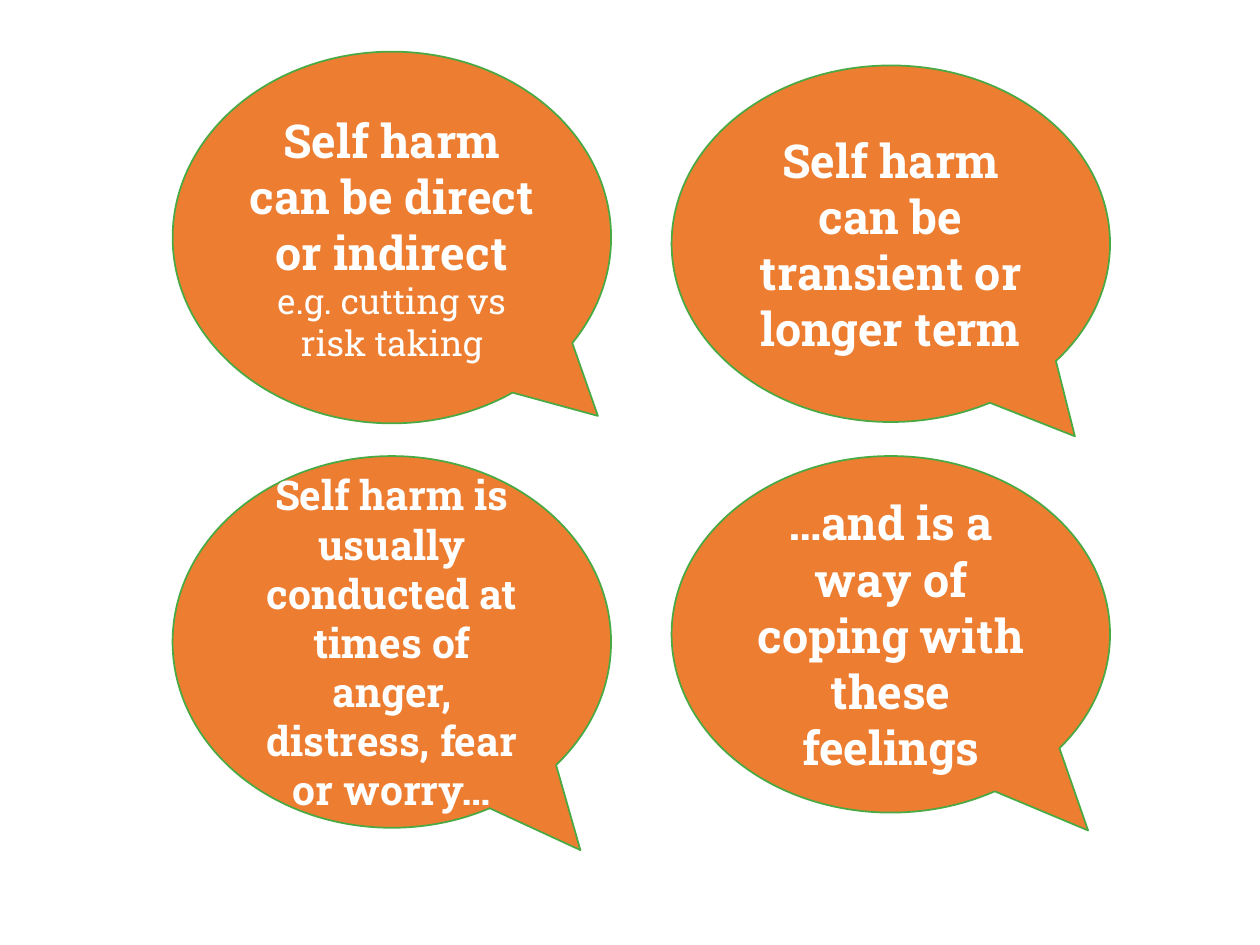
from pptx import Presentation
from pptx.dml.color import RGBColor
from pptx.enum.shapes import MSO_SHAPE
from pptx.enum.text import MSO_ANCHOR, PP_ALIGN
from pptx.util import Inches, Pt

BUBBLE = MSO_SHAPE.OVAL_CALLOUT
MIDDLE = MSO_ANCHOR.MIDDLE
CENTER = PP_ALIGN.CENTER

FONT = "Roboto Slab"
ORANGE, GREEN, WHITE = "ED7D31", "49AA43", "FFFFFF"
LEFT, RIGHT, LOWER = 1.37, 5.33, 3.62
WIDTH, TALL, SHORT = 3.48, 2.95, 2.83

# Left, top, height, tail tip, and lines of (text, size, bold)
BUBBLES = [
    (LEFT, 0.41, TALL, (0.47, 0.48),
     [("Self harm can be direct or indirect", 26.7, True),
      ("e.g. cutting vs risk taking", 20, False)]),
    (RIGHT, 0.52, SHORT, (0.42, 0.54),
     [("Self harm can be transient or longer term", 26.7, True)]),
    (LEFT, LOWER, TALL, (0.43, 0.56),
     [("Self harm is usually conducted at times of anger, "
       "distress, fear or worry…", 23.4, True)]),
    (RIGHT, LOWER, SHORT, (0.45, 0.55),
     [("…and is a way of coping with these feelings", 26.7, True)]),
]


def color(code):
    return RGBColor.from_string(code)


def add_text(frame, lines):
    frame.word_wrap = True
    frame.vertical_anchor = MIDDLE
    frame.text = "\n".join(text for text, _, _ in lines)
    for para, (_, size, bold) in zip(frame.paragraphs, lines):
        para.alignment = CENTER
        for run in para.runs:
            run.font.name = FONT
            run.font.size = Pt(size)
            run.font.bold = bold
            run.font.color.rgb = color(WHITE)


def add_bubble(slide, left, top, height, tip, lines):
    shape = slide.shapes.add_shape(
        BUBBLE, Inches(left), Inches(top), Inches(WIDTH), Inches(height))
    shape.shadow.inherit = False
    for i, value in enumerate(tip):
        shape.adjustments[i] = value
    shape.fill.solid()
    shape.fill.fore_color.rgb = color(ORANGE)
    shape.line.color.rgb = color(GREEN)
    shape.line.width = Pt(1)
    add_text(shape.text_frame, lines)


def main():
    deck = Presentation()
    deck.slide_width, deck.slide_height = Inches(10), Inches(7.5)
    slide = deck.slides.add_slide(deck.slide_layouts[6])

    # Four speech bubbles, two by two
    for bubble in BUBBLES:
        add_bubble(slide, *bubble)

    deck.save("out.pptx")


if __name__ == "__main__":
    main()
